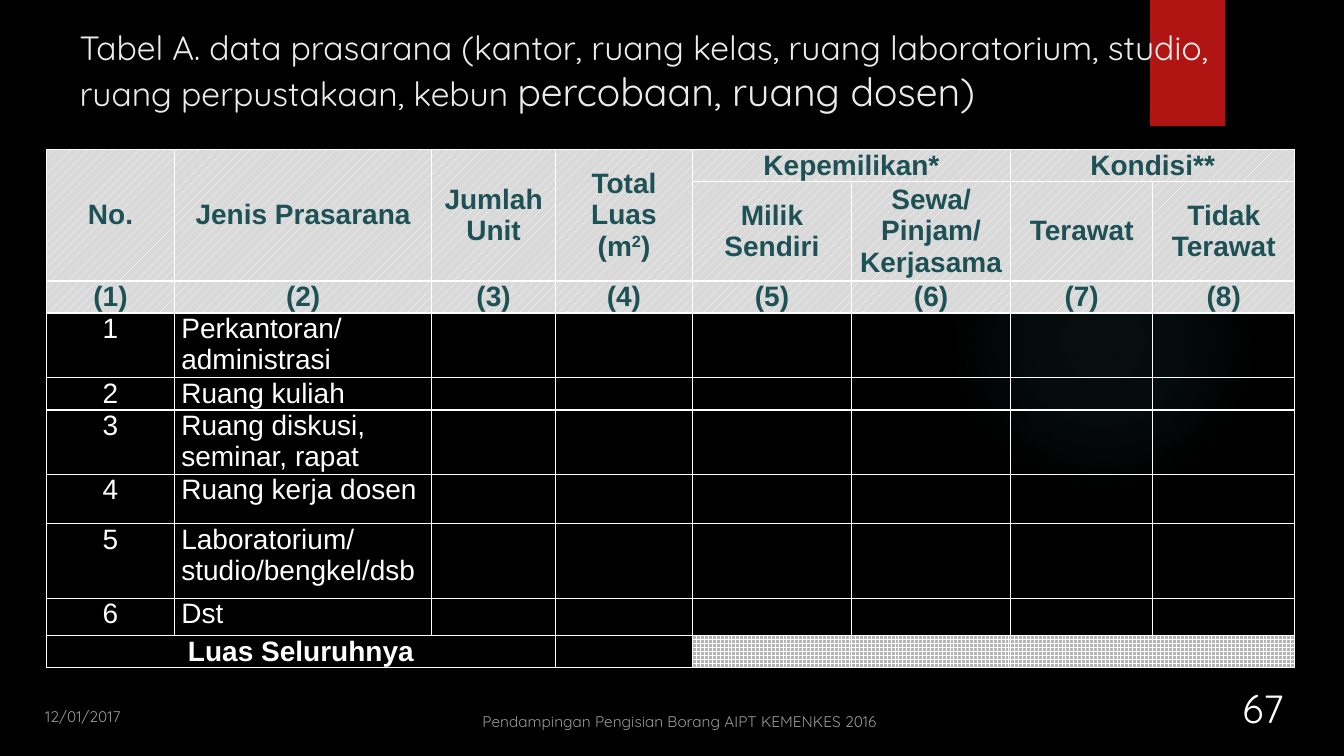
from dataclasses import dataclass

from lxml.etree import SubElement
from pptx import Presentation
from pptx.dml.color import RGBColor
from pptx.enum.dml import MSO_PATTERN
from pptx.enum.shapes import MSO_SHAPE
from pptx.enum.text import MSO_ANCHOR, MSO_AUTO_SIZE, PP_ALIGN
from pptx.oxml import parse_xml
from pptx.oxml.ns import nsdecls, qn
from pptx.util import Cm, Pt


@dataclass(frozen=True)
class Theme:
    background: str = "000000"
    glow: str = "50B9C1"
    ribbon: str = "B01513"
    title: str = "EBEBEB"
    heading: str = "1E5155"
    white: str = "FFFFFF"
    heading_fill: str = "D9D9D9"
    blocked_fill: str = "B4B4B4"
    display_font: str = "Quicksand"
    table_font: str = "Arial"
    title_size: int = 24
    large_size: int = 28
    table_size: int = 20
    footer_size: int = 11


THEME = Theme()

COLUMN_WIDTHS = (3.23, 6.48, 3.12, 3.45, 4.01, 4.01, 3.58, 3.58)
ROW_HEIGHTS = (0.81, 2.51, 0.81, 1.63, 0.81, 1.63, 1.24, 1.88, 0.94, 0.81)
HEADER_ROWS = 3
BLOCKED_COLUMN = 4
TOTAL_ROW = len(ROW_HEIGHTS) - 1

MERGES = (
    *((0, column, 1, column) for column in range(4)),
    (0, 4, 0, 5),
    (0, 6, 0, 7),
    (TOTAL_ROW, 0, TOTAL_ROW, 2),
)
HEADINGS = {
    (0, 0): ["No."],
    (0, 1): ["Jenis Prasarana"],
    (0, 2): ["Jumlah Unit"],
    (0, 3): ["Total Luas (m", "2", ")"],
    (0, 4): ["Kepemilikan*"],
    (0, 6): ["Kondisi**"],
    (1, 4): ["Milik Sendiri"],
    (1, 5): ["Sewa/ Pinjam/ Kerjasama"],
    (1, 6): ["Terawat"],
    (1, 7): ["Tidak Terawat"],
}
FACILITIES = (
    "Perkantoran/ administrasi",
    "Ruang kuliah",
    "Ruang diskusi, seminar, rapat",
    "Ruang kerja dosen",
    "Laboratorium/ studio/bengkel/dsb",
    "Dst",
)


def rgb(value):
    return RGBColor.from_string(value)


def style_paragraph(paragraph, font_name, color, size=None, bold=False, align=PP_ALIGN.LEFT):
    paragraph.alignment = align
    paragraph.font.name = font_name
    paragraph.font.color.rgb = rgb(color)
    paragraph.font.bold = bold
    if size:
        paragraph.font.size = Pt(size)


def add_decoration(slide, preset, left, top, width, height):
    decoration = slide.shapes.add_shape(preset, Cm(left), Cm(top), Cm(width), Cm(height))
    decoration.shadow.inherit = False
    decoration.line.fill.background()
    return decoration


def add_glow(slide):
    glow = add_decoration(slide, MSO_SHAPE.OVAL, 23.9, 4.65, 7.82, 7.82)
    glow.fill.background()
    stops = "".join(
        f'<a:gs pos="{position * 1000}"><a:srgbClr val="{THEME.glow}">'
        f'<a:alpha val="{opacity * 1000}"/></a:srgbClr></a:gs>'
        for position, opacity in ((0, 7), (36, 6), (69, 0))
    )
    gradient = parse_xml(
        f'<a:gradFill {nsdecls("a")}><a:gsLst>{stops}</a:gsLst><a:path path="circle">'
        '<a:fillToRect l="50000" t="50000" r="50000" b="50000"/></a:path></a:gradFill>'
    )
    properties = glow.element.spPr
    properties.replace(properties.find(qn("a:noFill")), gradient)


def add_ribbon(slide):
    ribbon = add_decoration(slide, MSO_SHAPE.RECTANGLE, 28.98, 0, 1.9, 3.18)
    ribbon.fill.solid()
    ribbon.fill.fore_color.rgb = rgb(THEME.ribbon)
    effects = ribbon.element.spPr.find(qn("a:effectLst"))
    effects.append(parse_xml(
        f'<a:outerShdw {nsdecls("a")} blurRad="{Pt(3)}" dist="{Pt(2)}" dir="5400000">'
        '<a:srgbClr val="000000"><a:alpha val="45000"/></a:srgbClr></a:outerShdw>'
    ))


def write_title(slide):
    title = slide.shapes.title
    title.left, title.top, title.width, title.height = Cm(1.75), Cm(0.56), Cm(29.64), Cm(3.89)
    frame = title.text_frame
    frame.word_wrap = True
    frame.auto_size = MSO_AUTO_SIZE.NONE
    frame.vertical_anchor = MSO_ANCHOR.TOP
    paragraph = frame.paragraphs[0]
    style_paragraph(paragraph, THEME.display_font, THEME.title)
    for words, size in (
        ("Tabel A. data prasarana (kantor, ruang kelas, ruang laboratorium, studio, "
         "ruang perpustakaan, kebun ", THEME.title_size),
        ("percobaan, ruang dosen)", THEME.large_size),
    ):
        run = paragraph.add_run()
        run.text = words
        run.font.size = Pt(size)
    title.element.getparent().append(title.element)


def prepare_cell(cell):
    cell.margin_left = cell.margin_right = Cm(0.17)
    cell.margin_top = cell.margin_bottom = 0
    properties = cell._tc.get_or_add_tcPr()
    for side in ("lnL", "lnR", "lnT", "lnB"):
        border = SubElement(properties, qn(f"a:{side}"), w=str(Pt(1)))
        SubElement(SubElement(border, qn("a:solidFill")), qn("a:srgbClr"), val=THEME.white)
    cell.fill.background()


def fill_pattern(cell, pattern, back):
    cell.fill.patterned()
    cell.fill.pattern = pattern
    cell.fill.fore_color.rgb = rgb(THEME.white)
    cell.fill.back_color.rgb = rgb(back)


def write_cell(cell, parts, color=THEME.white, bold=False, align=PP_ALIGN.CENTER,
               anchor=MSO_ANCHOR.MIDDLE):
    cell.vertical_anchor = anchor
    paragraph = cell.text_frame.paragraphs[0]
    style_paragraph(paragraph, THEME.table_font, color, THEME.table_size, bold, align)
    for index, part in enumerate(parts):
        run = paragraph.add_run()
        run.text = part
        if index == 1:
            run._r.get_or_add_rPr().set("baseline", "30000")


def add_facilities_table(slide):
    table = slide.shapes.add_table(
        len(ROW_HEIGHTS), len(COLUMN_WIDTHS), Cm(1.17), Cm(3.76),
        Cm(sum(COLUMN_WIDTHS)), Cm(sum(ROW_HEIGHTS)),
    ).table
    table.first_row = table.horz_banding = False
    for column, width in zip(table.columns, COLUMN_WIDTHS):
        column.width = Cm(width)
    for row_index, (row, height) in enumerate(zip(table.rows, ROW_HEIGHTS)):
        row.height = Cm(height)
        for column_index, cell in enumerate(row.cells):
            prepare_cell(cell)
            if row_index < HEADER_ROWS:
                fill_pattern(cell, MSO_PATTERN.PERCENT_20, THEME.heading_fill)
            elif row_index == TOTAL_ROW and column_index >= BLOCKED_COLUMN:
                fill_pattern(cell, MSO_PATTERN.CROSS, THEME.blocked_fill)
    for top, left, bottom, right in MERGES:
        table.cell(top, left).merge(table.cell(bottom, right))
    numbers = {(2, column): [f"({column + 1})"] for column in range(len(COLUMN_WIDTHS))}
    for position, parts in {**HEADINGS, **numbers}.items():
        write_cell(table.cell(*position), parts, THEME.heading, bold=True)
    for number, facility in enumerate(FACILITIES, 1):
        row_index = HEADER_ROWS + number - 1
        write_cell(table.cell(row_index, 0), [str(number)], anchor=MSO_ANCHOR.TOP)
        write_cell(table.cell(row_index, 1), [facility], align=PP_ALIGN.LEFT,
                   anchor=MSO_ANCHOR.TOP)
    write_cell(table.cell(TOTAL_ROW, 0), ["Luas Seluruhnya"], bold=True)


def add_footer(slide, words, left, top, width, height, size=THEME.footer_size,
               align=PP_ALIGN.LEFT, anchor=MSO_ANCHOR.BOTTOM, opacity=60):
    footer = slide.shapes.add_textbox(Cm(left), Cm(top), Cm(width), Cm(height))
    frame = footer.text_frame
    frame.word_wrap = True
    frame.vertical_anchor = anchor
    paragraph = frame.paragraphs[0]
    paragraph.text = words
    style_paragraph(paragraph, THEME.display_font, THEME.white, size, align=align)
    if opacity < 100:
        for color in paragraph._p.iter(qn("a:srgbClr")):
            SubElement(color, qn("a:alpha"), val=str(opacity * 1000))


def main():
    presentation = Presentation()
    presentation.slide_width, presentation.slide_height = Cm(33.87), Cm(19.05)
    slide = presentation.slides.add_slide(presentation.slide_layouts[5])
    slide.background.fill.solid()
    slide.background.fill.fore_color.rgb = rgb(THEME.background)
    add_glow(slide)
    add_ribbon(slide)
    write_title(slide)
    add_facilities_table(slide)
    add_footer(slide, "67", 30.66, 16.43, 2.34, 2.13, THEME.large_size, PP_ALIGN.CENTER, opacity=100)
    add_footer(slide, "Pendampingan Pengisian Borang AIPT KEMENKES 2016", 11.91, 17.7, 10.72, 0.84)
    add_footer(slide, "12/01/2017", 0.89, 17.7, 2.74, 0.84, anchor=MSO_ANCHOR.TOP)
    presentation.save("out.pptx")


if __name__ == "__main__":
    main()
